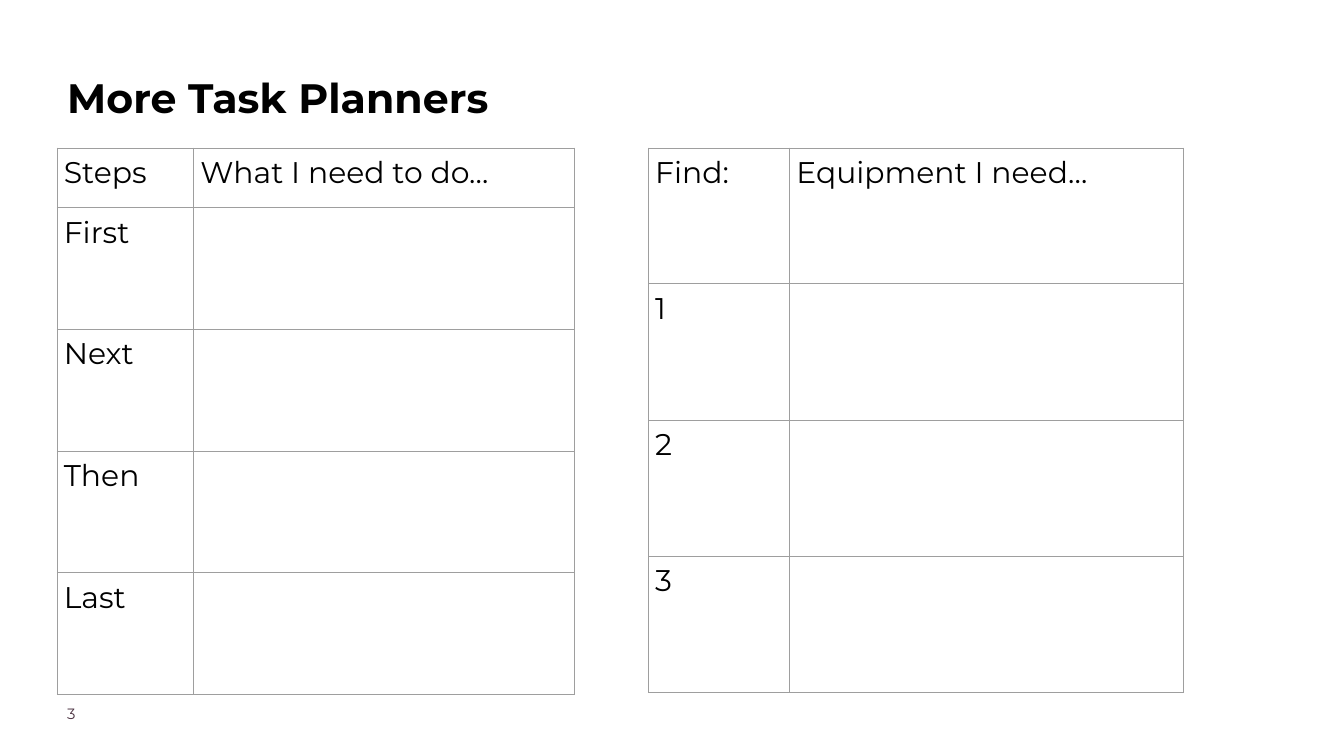
import pptx
import pptx.dml.color
import pptx.oxml
import pptx.oxml.ns
import pptx.util

WIDTH, HEIGHT = pptx.util.Inches(20), pptx.util.Inches(11.25)
FONT = "Montserrat"
INK, NUMBER_INK, BORDER = "000000", "4B3241", "9E9E9E"
TABLE_TOP = 19.56


def color(value):
    """Return the colour for a hex string."""
    return pptx.dml.color.RGBColor.from_string(value)


def across(percent):
    """Return a share of the slide's width."""
    return round(WIDTH * percent / 100)


def down(percent):
    """Return a share of the slide's height."""
    return round(HEIGHT * percent / 100)


def style(p, size, ink, bold=False):
    """Set the font of a paragraph."""
    p.font.name = FONT
    p.font.size = pptx.util.Pt(size)
    p.font.bold = bold
    p.font.color.rgb = color(ink)


def add_text(slide, text, box, size, ink, bold=False, spacing=1.0):
    """Add a text box without insets, placed by shares of the slide."""
    left, top, width, height = box
    sp = slide.shapes.add_textbox(across(left), down(top), across(width), down(height))
    tf = sp.text_frame
    tf.word_wrap = True
    tf.margin_left = tf.margin_top = tf.margin_right = tf.margin_bottom = 0
    p = tf.paragraphs[0]
    p.text = text
    p.line_spacing = spacing
    style(p, size, ink, bold)


def add_borders(cell):
    """Draw a thin line on all four sides of a cell."""
    tc_pr = cell._tc.get_or_add_tcPr()
    for i, side in enumerate("LRTB"):
        tc_pr.insert(i, pptx.oxml.parse_xml(
            f'<a:ln{side} {pptx.oxml.ns.nsdecls("a")} w="{pptx.util.Pt(0.75)}">'
            f'<a:solidFill><a:srgbClr val="{BORDER}"/></a:solidFill></a:ln{side}>'))


def fill_cell(cell, text):
    """Write and format one planner cell."""
    cell.fill.background()
    cell.margin_left = cell.margin_right = pptx.util.Inches(0.1)
    cell.margin_top = cell.margin_bottom = pptx.util.Inches(0.1)
    p = cell.text_frame.paragraphs[0]
    p.text = text
    style(p, 32, INK)
    add_borders(cell)


def add_planner(slide, left, widths, header, labels, header_height, row_height):
    """Add a planner table with a header row and labelled empty rows."""
    heights = [header_height] + [row_height] * len(labels)
    rows = [header] + [(label, "") for label in labels]
    table = slide.shapes.add_table(
        len(rows), len(widths), across(left), down(TABLE_TOP),
        across(sum(widths)), down(sum(heights))).table
    table.first_row = table.horz_banding = False
    for column, width in zip(table.columns, widths):
        column.width = across(width)
    for row, height, texts in zip(table.rows, heights, rows):
        row.height = down(height)
        for cell, text in zip(row.cells, texts):
            fill_cell(cell, text)


def main():
    """Build and save the task planner slide."""
    prs = pptx.Presentation()
    prs.slide_width, prs.slide_height = WIDTH, HEIGHT
    slide = prs.slides.add_slide(prs.slide_layouts[6])
    add_text(slide, "More Task Planners", (5, 8.62, 72.2, 15.82), 44, INK, True, 1.15)
    add_text(slide, "3", (5, 93.16, 7.85, 3.47), 16, NUMBER_INK)
    add_planner(slide, 4.25, (10.15, 28.35), ("Steps", "What I need to do…"),
                ("First", "Next", "Then", "Last"), 7.91, 16.09)
    add_planner(slide, 48.25, (10.5, 29.3), ("Find:", "Equipment I need…"),
                ("1", "2", "3"), 17.96, 18.04)
    prs.save("out.pptx")


if __name__ == "__main__":
    main()
